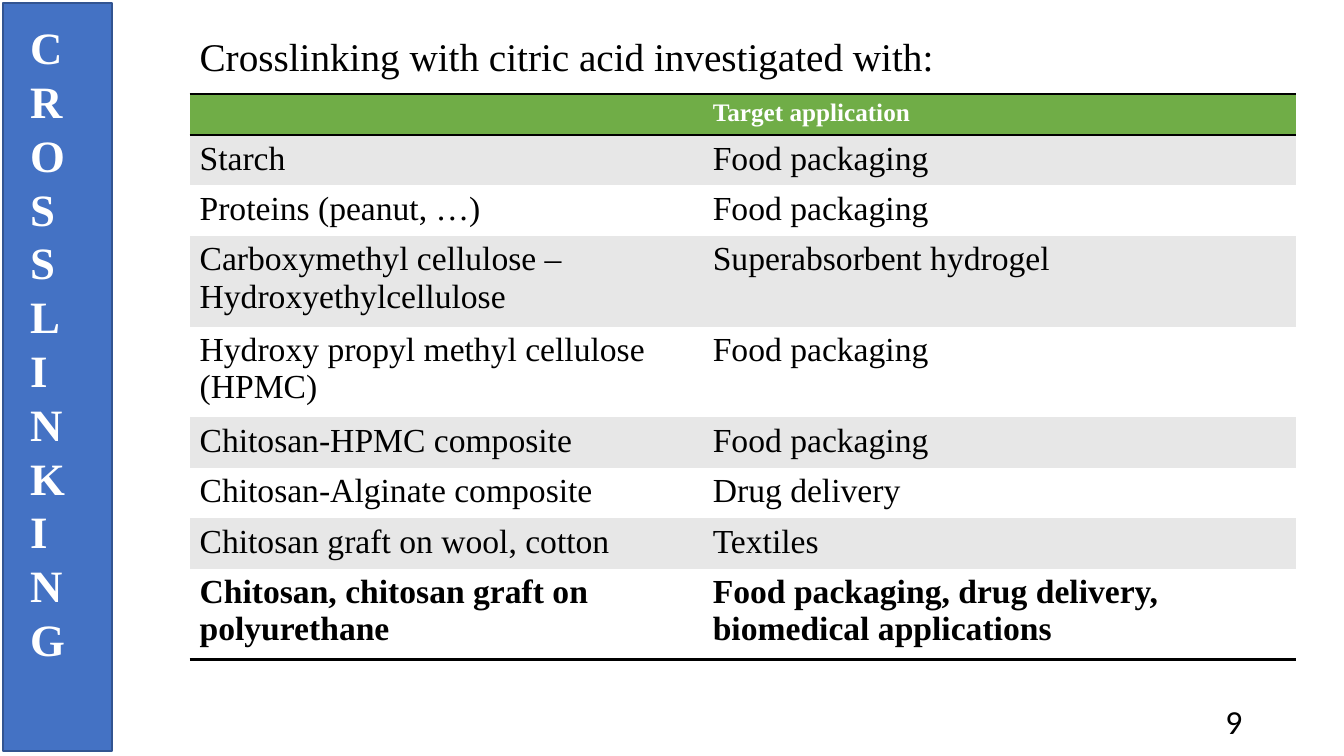
import pptx
import pptx.dml.color
import pptx.enum.shapes
import pptx.enum.text
import pptx.oxml
import pptx.oxml.ns
import pptx.util
import lxml.etree

RGBColor = pptx.dml.color.RGBColor
Inches = pptx.util.Inches
Pt = pptx.util.Pt
PP_ALIGN = pptx.enum.text.PP_ALIGN
MSO_ANCHOR = pptx.enum.text.MSO_ANCHOR
MSO_AUTO_SIZE = pptx.enum.text.MSO_AUTO_SIZE
qn = pptx.oxml.ns.qn

BLUE = RGBColor(0x44, 0x72, 0xC4)
DARK_BLUE = RGBColor(0x32, 0x54, 0x91)
GREEN = RGBColor(0x70, 0xAD, 0x47)
GREY = RGBColor(0xE7, 0xE7, 0xE7)
WHITE = RGBColor(0xFF, 0xFF, 0xFF)
BLACK = RGBColor(0, 0, 0)

SERIF = "Times New Roman"
PLAIN_TABLE = "{2D5ABB26-0587-4C30-8999-92F81FD0307C}"
COLUMN_SHARES = (0.464, 0.536)
HEADER_HEIGHT, LINE_HEIGHT, CELL_PADDING = 0.41, 0.37, 0.1

APPLICATIONS = [
    ("", "Target application", 1),
    ("Starch", "Food packaging", 1),
    ("Proteins (peanut, …)", "Food packaging", 1),
    ("Carboxymethyl cellulose – Hydroxyethylcellulose", "Superabsorbent hydrogel", 2),
    ("Hydroxy propyl methyl cellulose (HPMC)", "Food packaging", 2),
    ("Chitosan-HPMC composite", "Food packaging", 1),
    ("Chitosan-Alginate composite", "Drug delivery", 1),
    ("Chitosan graft on wool, cotton", "Textiles", 1),
    ("Chitosan, chitosan graft on polyurethane",
     "Food packaging, drug delivery, biomedical applications", 2),
]


def write(frame, text, size, color, font=SERIF, bold=False):
    frame.text = text
    para = frame.paragraphs[0]
    para.font.size = Pt(size)
    for span in para.runs:
        span.font.name = font
        span.font.size = Pt(size)
        span.font.bold = bold
        span.font.color.rgb = color
    return para


def add_text_shadow(span):
    shadow = pptx.oxml.parse_xml(
        '<a:effectLst xmlns:a="http://schemas.openxmlformats.org/drawingml/2006/main">'
        '<a:outerShdw blurRad="50800" dist="38100" dir="2700000">'
        '<a:srgbClr val="000000"><a:alpha val="40000"/></a:srgbClr>'
        '</a:outerShdw></a:effectLst>')
    span.font.fill._xPr.find(qn("a:solidFill")).addnext(shadow)


def add_sidebar(page, left, top, width, height):
    bar = page.shapes.add_shape(
        pptx.enum.shapes.MSO_SHAPE.RECTANGLE,
        Inches(left), Inches(top), Inches(width), Inches(height))
    bar.shadow.inherit = False
    bar.fill.solid()
    bar.fill.fore_color.rgb = BLUE
    bar.line.color.rgb = DARK_BLUE
    bar.line.width = Pt(1)

    box = page.shapes.add_textbox(
        Inches(left + 0.17), Inches(top + 0.12), Inches(0.78), Inches(6.55))
    frame = box.text_frame
    frame.word_wrap = False
    frame.auto_size = MSO_AUTO_SIZE.SHAPE_TO_FIT_TEXT
    frame._txBody.bodyPr.set("vert", "wordArtVert")
    span = write(frame, "CROSSLINKING", 32, WHITE, bold=True).runs[0]
    span.font._element.set("spc", "-300")
    add_text_shadow(span)


def place_title(page, left, top, width, height):
    title = page.shapes.title
    title.left, title.top = Inches(left), Inches(top)
    title.width, title.height = Inches(width), Inches(height)
    frame = title.text_frame
    frame.word_wrap = True
    frame.auto_size = MSO_AUTO_SIZE.NONE
    frame.vertical_anchor = MSO_ANCHOR.TOP
    para = write(frame, "Crosslinking with citric acid investigated with:", 28, BLACK)
    para.alignment = PP_ALIGN.LEFT
    para.line_spacing = 0.9


def add_border(cell, side):
    border = lxml.etree.SubElement(
        cell._tc.get_or_add_tcPr(), qn("a:" + side), w=str(Pt(2)))
    fill = lxml.etree.SubElement(border, qn("a:solidFill"))
    lxml.etree.SubElement(fill, qn("a:srgbClr"), val=str(BLACK))


def add_applications(page, left, top, width):
    heights = [HEADER_HEIGHT] + [
        lines * LINE_HEIGHT + CELL_PADDING for _, _, lines in APPLICATIONS[1:]]
    holder = page.shapes.add_table(
        len(APPLICATIONS), len(COLUMN_SHARES),
        Inches(left), Inches(top), Inches(width), Inches(sum(heights)))
    table = holder.table
    table._tbl.tblPr.find(qn("a:tableStyleId")).text = PLAIN_TABLE
    table.horz_banding = False
    for column, share in zip(table.columns, COLUMN_SHARES):
        column.width = Inches(width * share)

    last = len(APPLICATIONS) - 1
    for index, (material, application, _) in enumerate(APPLICATIONS):
        header = index == 0
        table.rows[index].height = Inches(heights[index])
        for column, text in enumerate((material, application)):
            cell = table.cell(index, column)
            write(cell.text_frame, text, 18 if header else 24,
                  WHITE if header else BLACK, bold=index in (0, last))
            if header:
                add_border(cell, "lnT")
            if index in (0, last):
                add_border(cell, "lnB")
            cell.fill.solid()
            cell.fill.fore_color.rgb = GREEN if header else (WHITE, GREY)[index % 2]


def add_page_number(page, left, top, width, height):
    box = page.shapes.add_textbox(
        Inches(left), Inches(top), Inches(width), Inches(height))
    frame = box.text_frame
    frame.word_wrap = True
    frame.vertical_anchor = MSO_ANCHOR.MIDDLE
    write(frame, "9", 24, BLACK, font="Calibri").alignment = PP_ALIGN.RIGHT


def main():
    deck = pptx.Presentation()
    deck.slide_width, deck.slide_height = Inches(13.33), Inches(7.5)
    page = deck.slides.add_slide(deck.slide_layouts[5])
    add_sidebar(page, 0.03, 0.03, 1.08, 7.42)
    place_title(page, 1.88, 0.32, 9.17, 0.61)
    add_applications(page, 1.88, 0.93, 10.97)
    add_page_number(page, 9.42, 6.95, 3, 0.4)
    deck.save("out.pptx")


if __name__ == "__main__":
    main()
